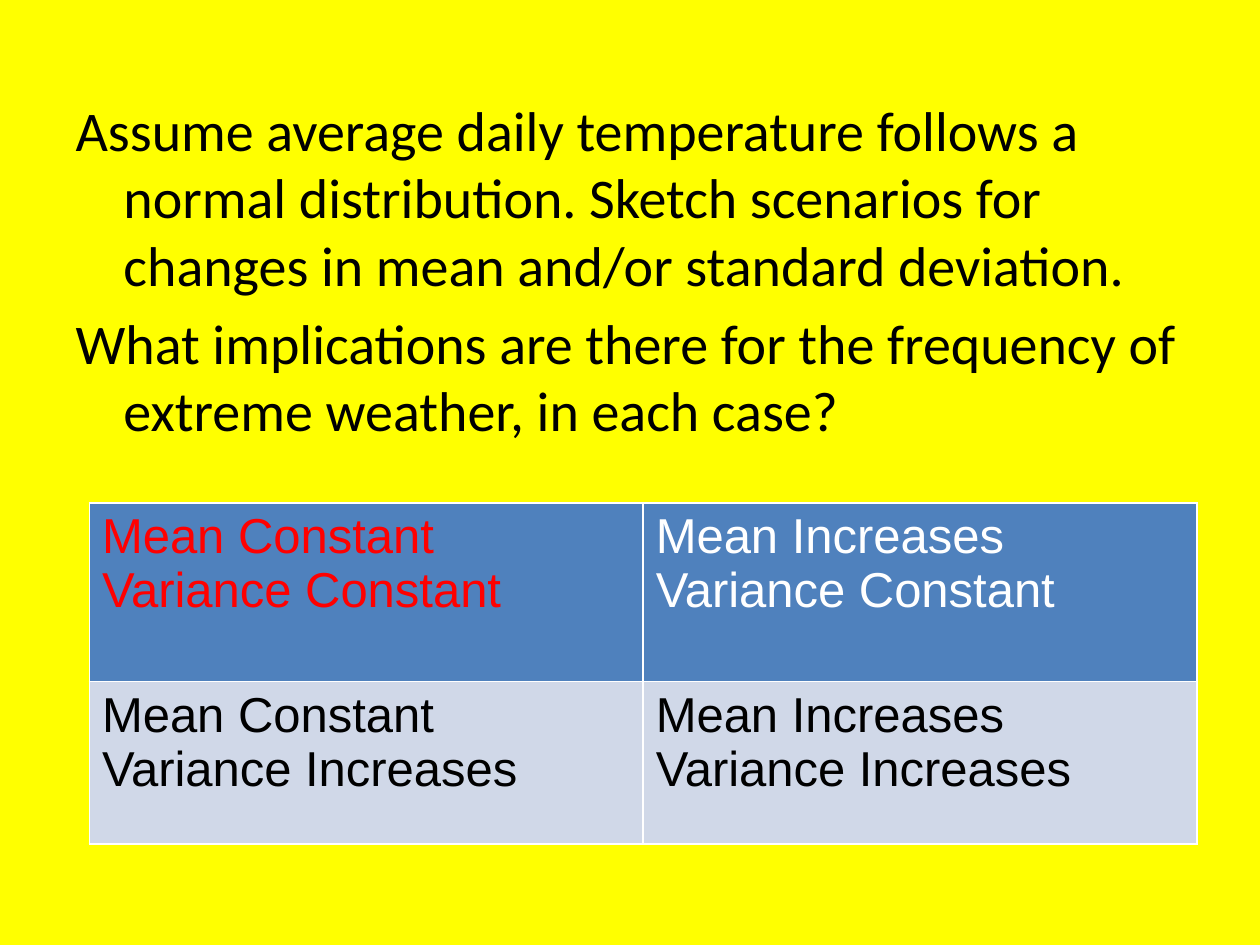
"""Build a slide about temperature scenarios with a two-by-two table."""
import lxml.etree
import pptx
import pptx.dml.color
import pptx.enum.text
import pptx.oxml.ns
import pptx.util

Inches = pptx.util.Inches

QUESTIONS = [
    "Assume average daily temperature follows a normal distribution. "
    "Sketch scenarios for changes in mean and/or standard deviation.",
    "What implications are there for the frequency of extreme weather, in each case?",
]
MEANS = ["Mean Constant", "Mean Increases"]
VARIANCES = ["Variance Constant", "Variance Increases"]
ROW_HEIGHTS = [1.42, 1.29]
ROW_FILLS = ["4F81BD", "D0D8E8"]
TEXT_COLORS = [["FF0000", "FFFFFF"], ["000000", "000000"]]


def paint(fill, color):
    """Give a fill a solid colour."""
    fill.solid()
    fill.fore_color.rgb = pptx.dml.color.RGBColor.from_string(color)


def write(frame, lines, font, size, color):
    """Write one paragraph per line and return the paragraphs."""
    for index, line in enumerate(lines):
        para = frame.paragraphs[0] if index == 0 else frame.add_paragraph()
        span = para.add_run()
        span.text = line
        span.font.name = font
        span.font.size = pptx.util.Pt(size)
        span.font.bold = False
        paint(span.font.fill, color)
    return frame.paragraphs


def border(cell, color, points):
    """Draw a solid line on all four sides of a cell."""
    properties = cell._tc.get_or_add_tcPr()
    qn = pptx.oxml.ns.qn
    for position, side in enumerate("LRTB"):
        line = lxml.etree.Element(qn(f"a:ln{side}"), w=str(pptx.util.Pt(points)))
        fill = lxml.etree.SubElement(line, qn("a:solidFill"))
        lxml.etree.SubElement(fill, qn("a:srgbClr"), val=color)
        properties.insert(position, line)


def add_questions(page):
    """Fill the body placeholder with hanging, unbulleted paragraphs."""
    box = page.placeholders[1]
    box.left, box.top = Inches(0.5), Inches(0.71)
    box.width, box.height = Inches(9), Inches(5.99)
    box.text_frame.auto_size = pptx.enum.text.MSO_AUTO_SIZE.NONE
    for para in write(box.text_frame, QUESTIONS, "Calibri", 32, "000000"):
        properties = para._p.get_or_add_pPr()
        properties.set("marL", str(Inches(0.38)))
        properties.set("indent", str(Inches(-0.38)))
        lxml.etree.SubElement(properties, pptx.oxml.ns.qn("a:buNone"))


def add_scenarios(page):
    """Add the table that crosses means with variances."""
    table = page.shapes.add_table(
        len(VARIANCES), len(MEANS), Inches(0.71), Inches(3.99),
        Inches(8.79), Inches(sum(ROW_HEIGHTS))).table
    table.first_row = table.horz_banding = False
    for row, variance in enumerate(VARIANCES):
        table.rows[row].height = Inches(ROW_HEIGHTS[row])
        for column, mean in enumerate(MEANS):
            cell = table.cell(row, column)
            paint(cell.fill, ROW_FILLS[row])
            border(cell, "FFFFFF", 1)
            write(cell.text_frame, [mean, variance], "Arial", 28,
                  TEXT_COLORS[row][column])


def main():
    """Build and save the deck."""
    deck = pptx.Presentation()
    deck.slide_width, deck.slide_height = Inches(10), Inches(7.5)
    page = deck.slides.add_slide(deck.slide_layouts[1])
    paint(page.background.fill, "FFFF00")
    title = page.shapes.title.element
    title.getparent().remove(title)
    add_questions(page)
    add_scenarios(page)
    deck.save("out.pptx")


if __name__ == "__main__":
    main()
